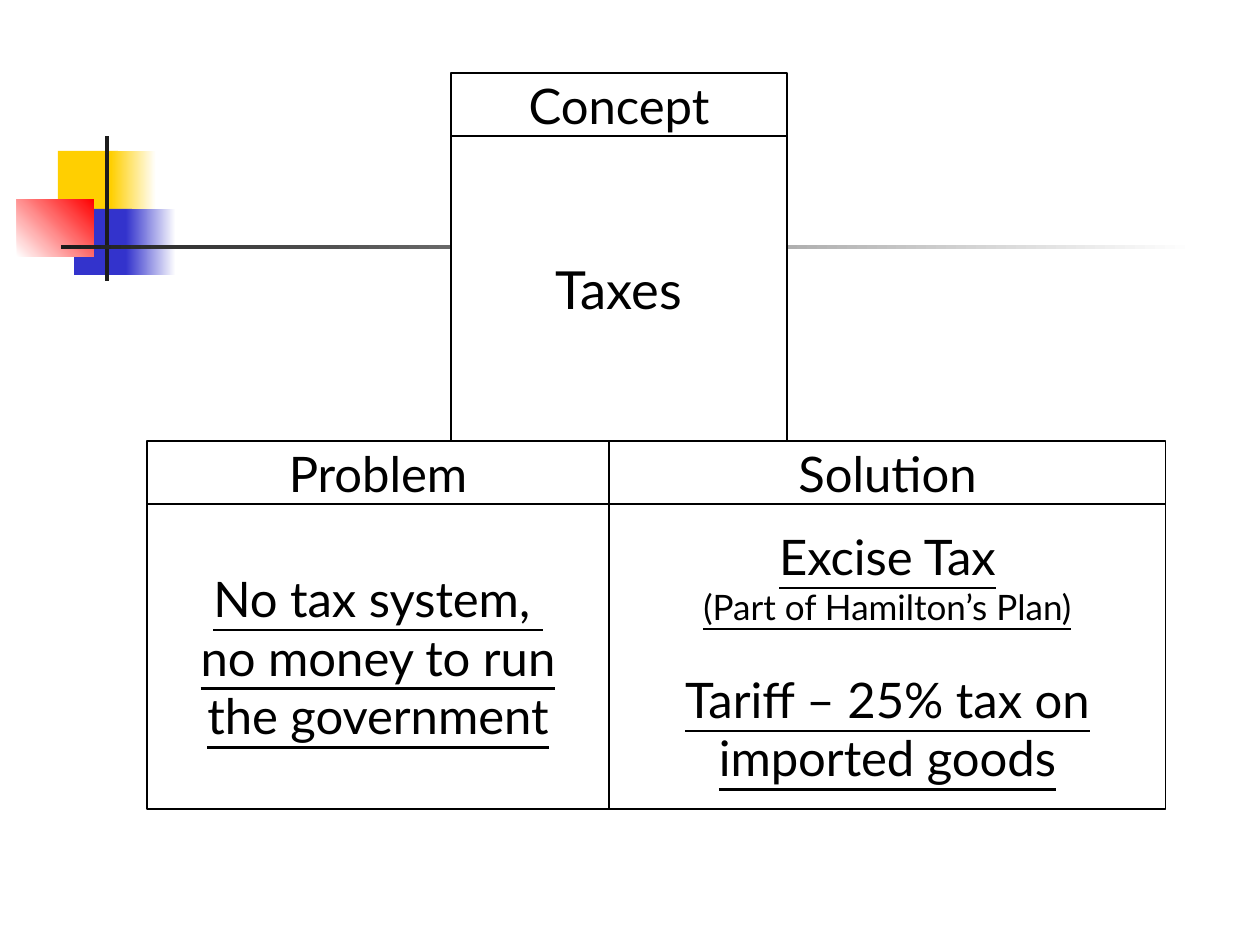
from pptx import Presentation
from pptx.dml.color import RGBColor
from pptx.enum.shapes import MSO_SHAPE as Preset
from pptx.enum.text import MSO_ANCHOR as Anchor, PP_ALIGN as Align
from pptx.util import Emu, Pt

PX = 914400 // 126
COLORS = {
    "white": "FFFFFF", "black": "000000", "ink": "1C1C1C",
    "yellow": "FFCF01", "blue": "3333CC", "red": "FF0000",
}
FONT = "Lato"

# left, top, width, height, colours from start to end, gradient angle
ORNAMENTS = [
    (58, 151, 60, 66, ["yellow"], 0),
    (111, 151, 45, 66, ["yellow", "white"], 0),
    (74, 209, 58, 66, ["blue"], 0),
    (126, 209, 50, 66, ["blue", "white"], 0),
    (17, 199, 77, 58, ["white", "red"], 45),
    (105, 136, 4, 145, ["ink"], 0),
    (61, 245, 1134, 4, ["ink", "white"], 0),
]

HEADING_H, BODY_H = 63, 305
CONCEPT_TOP = 73
PAIR_TOP = CONCEPT_TOP + HEADING_H + BODY_H

# left, top, width, heading, body lines as (text, size, space before), underlined
PANELS = [
    (451, CONCEPT_TOP, 336, "Concept", [("Taxes", 30, 0)], False),
    (147, PAIR_TOP, 462, "Problem",
     [("No tax system, \vno money to run\vthe government", 28, 0)], True),
    (609, PAIR_TOP, 557, "Solution",
     [("Excise Tax", 28, 0), ("(Part of Hamilton’s Plan)", 20, 0),
      ("Tariff – 25% tax on", 28, 24), ("imported goods", 28, 0)], True),
]


def color(name):
    return RGBColor.from_string(COLORS[name])


def add_rect(slide, left, top, width, height, fills, angle=0):
    bounds = [Emu(v * PX) for v in (left, top, width, height)]
    rect = slide.shapes.add_shape(Preset.RECTANGLE, *bounds)
    rect.shadow.inherit = False
    rect.line.fill.background()
    if len(fills) == 1:
        rect.fill.solid()
        rect.fill.fore_color.rgb = color(fills[0])
    else:
        rect.fill.gradient()
        rect.fill.gradient_angle = angle
        for stop, name in zip(rect.fill.gradient_stops, fills):
            stop.color.rgb = color(name)
    return rect


def add_box(slide, left, top, width, height, lines, underlined=False):
    box = add_rect(slide, left, top, width, height, ["white"])
    box.line.color.rgb = color("black")
    box.line.width = Pt(0.75)
    frame = box.text_frame
    frame.word_wrap = False
    frame.vertical_anchor = Anchor.MIDDLE
    for i, (text, size, gap) in enumerate(lines):
        line = frame.add_paragraph() if i else frame.paragraphs[0]
        line.text = text
        line.alignment = Align.CENTER
        line.space_before = Pt(gap)
        line.font.name = FONT
        line.font.size = Pt(size)
        line.font.color.rgb = color("black")
        line.font.underline = underlined


def main():
    deck = Presentation()
    deck.slide_width, deck.slide_height = Emu(1260 * PX), Emu(945 * PX)
    slide = deck.slides.add_slide(deck.slide_layouts[6])
    for ornament in ORNAMENTS:
        add_rect(slide, *ornament)
    for left, top, width, heading, body, underlined in PANELS:
        add_box(slide, left, top + HEADING_H, width, BODY_H, body, underlined)
    for left, top, width, heading, body, underlined in PANELS:
        add_box(slide, left, top, width, HEADING_H, [(heading, 28, 0)])
    deck.save("out.pptx")


if __name__ == "__main__":
    main()
